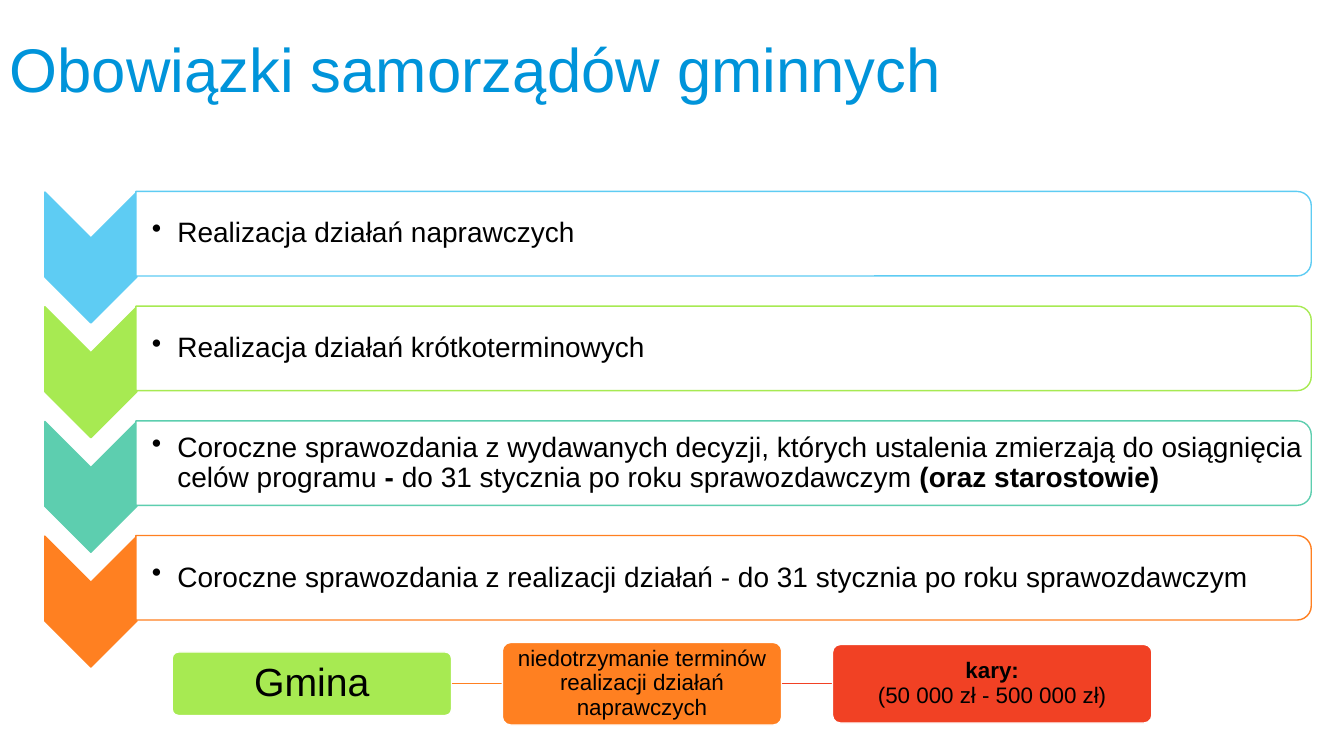
from pptx import Presentation
from pptx.dml.color import RGBColor
from pptx.enum.shapes import MSO_CONNECTOR, MSO_SHAPE
from pptx.enum.text import MSO_ANCHOR, PP_ALIGN
from pptx.oxml.ns import qn
from pptx.util import Cm, Pt
from lxml.etree import SubElement

WHITE = RGBColor(0xFF, 0xFF, 0xFF)
BLACK = RGBColor(0x00, 0x00, 0x00)
BLUE = RGBColor(0x00, 0x94, 0xDA)
SKY = RGBColor(0x5E, 0xCC, 0xF3)
LIME = RGBColor(0xA7, 0xEA, 0x52)
TEAL = RGBColor(0x5D, 0xCE, 0xAF)
ORANGE = RGBColor(0xFF, 0x80, 0x21)
RED = RGBColor(0xF1, 0x41, 0x24)

deck = Presentation()
deck.slide_width, deck.slide_height = Cm(33.87), Cm(19.05)
slide = deck.slides.add_slide(deck.slide_layouts[6])
shapes = slide.shapes


def write(box, *parts, size=20, color=BLACK, align=PP_ALIGN.LEFT,
          pads=(0.03, 0.03, 0.03, 0.03), bullet=False):
    """Fill box with parts, each a (text, bold) pair; "\\n" breaks the line."""
    frame = box.text_frame
    frame.word_wrap = True
    frame.vertical_anchor = MSO_ANCHOR.MIDDLE
    (frame.margin_left, frame.margin_top,
     frame.margin_right, frame.margin_bottom) = [Cm(pad) for pad in pads]
    para = frame.paragraphs[0]
    para.alignment = align
    para.line_spacing = 0.9
    if bullet:
        props = para._p.get_or_add_pPr()
        props.set("marL", str(Cm(0.64)))
        props.set("indent", str(-Cm(0.64)))
        SubElement(props, qn("a:buChar")).set("char", "•")
    for text, bold in parts:
        if text == "\n":
            para.add_line_break()
            continue
        run = para.add_run()
        run.text = text
        run.font.name = "Arial"
        run.font.size = Pt(size)
        run.font.bold = bold
        run.font.color.rgb = color


def draw(kind, left, top, width, height, fill, line, turn=0):
    shape = shapes.add_shape(kind, Cm(left), Cm(top), Cm(width), Cm(height))
    shape.rotation = turn
    shape.shadow.inherit = False
    shape.fill.solid()
    shape.fill.fore_color.rgb = fill
    shape.line.color.rgb = line
    shape.line.width = Pt(1)
    return shape


title = shapes.add_textbox(0, 0, Cm(25.98), Cm(3.68))
write(title, ("Obowiązki samorządów gminnych", False), size=44, color=BLUE,
      pads=(0.25, 0.13, 0.25, 0.13))

# Duties: a chevron and a bar per row
duties = [
    (SKY, [("Realizacja działań naprawczych", False)]),
    (LIME, [("Realizacja działań krótkoterminowych", False)]),
    (TEAL, [("Coroczne sprawozdania z wydawanych decyzji, których ustalenia "
             "zmierzają do osiągnięcia celów programu ", False),
            ("- ", True),
            ("do 31 stycznia po roku sprawozdawczym ", False),
            ("(oraz starostowie)", True)]),
    (ORANGE, [("Coroczne sprawozdania z realizacji działań - do 31 stycznia "
               "po roku sprawozdawczym", False)]),
]
for row, (color, parts) in enumerate(duties):
    drop = row * 2.89
    draw(MSO_SHAPE.CHEVRON, 0.64, 5.33 + drop, 3.3, 2.32, color, color, 90)
    draw(MSO_SHAPE.ROUND_2_SAME_RECTANGLE, 17.17, -8.92 + drop, 2.13, 29.62,
         WHITE, color, 90)
    label = shapes.add_textbox(Cm(3.43), Cm(4.93 + drop), Cm(29.52), Cm(1.93))
    write(label, *parts, pads=(0.4, 0.03, 0.03, 0.03), bullet=True)

# Penalty chain along one middle line
mid, gap, left = 17.22, 1.28, 4.34
chain = [
    (LIME, 7.04, 1.6, 28, [("Gmina", False)]),
    (ORANGE, 7.04, 2.08, 16,
     [("niedotrzymanie terminów realizacji działań naprawczych", False)]),
    (RED, 8.05, 1.98, 16,
     [("kary:", True), ("\n", True), ("(50 000 zł - 500 000 zł)", False)]),
]
for step, (color, width, height, size, parts) in enumerate(chain):
    if step:
        link = shapes.add_connector(MSO_CONNECTOR.STRAIGHT, Cm(left - gap),
                                    Cm(mid), Cm(left), Cm(mid))
        link.line.color.rgb = color
        link.line.width = Pt(1)
        SubElement(link._element.spPr, qn("a:effectLst"))
    card = draw(MSO_SHAPE.ROUNDED_RECTANGLE, left, mid + 0.01 - height / 2,
                width, height, color, WHITE)
    card.adjustments[0] = 0.1
    write(card, *parts, size=size, align=PP_ALIGN.CENTER)
    left += width + gap

deck.save("out.pptx")
